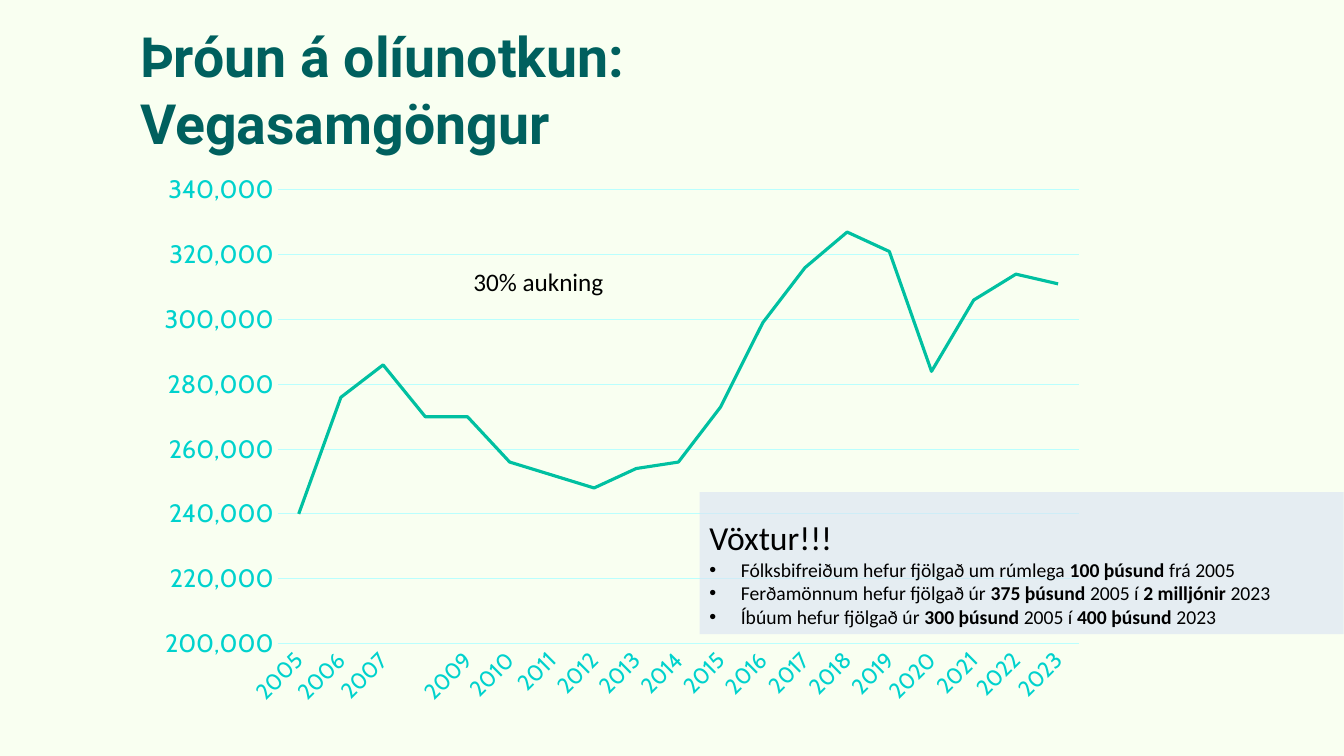
from lxml import etree
from pptx import Presentation
from pptx.chart.data import CategoryChartData
from pptx.dml.color import RGBColor
from pptx.enum.chart import XL_CHART_TYPE, XL_TICK_MARK
from pptx.enum.shapes import MSO_SHAPE
from pptx.enum.text import MSO_ANCHOR, PP_ALIGN
from pptx.oxml import parse_xml
from pptx.oxml.ns import nsdecls, qn
from pptx.util import Cm, Pt

LINE, NONE = XL_CHART_TYPE.LINE, XL_TICK_MARK.NONE
RECT, LEFT = MSO_SHAPE.RECTANGLE, PP_ALIGN.LEFT
TOP, BOTTOM = MSO_ANCHOR.TOP, MSO_ANCHOR.BOTTOM

TITLE = "Þróun á olíunotkun: Vegasamgöngur"
NOTE = "30% aukning"
HEAD = "Vöxtur!!!"
# Every second piece of a bullet is bold.
POINTS = [
    ["Fólksbifreiðum hefur fjölgað um rúmlega ", "100 þúsund ", "frá 2005"],
    ["Ferðamönnum hefur fjölgað úr ", "375 þúsund ", "2005 í ",
     "2 milljónir ", "2023"],
    ["Íbúum hefur fjölgað úr ", "300 þúsund ", "2005 í ",
     "400 þúsund ", "2023"],
]
YEARS = [str(year) for year in range(2005, 2024)]
USE = [240000, 276000, 286000, 270000, 270000, 256000, 252000, 248000,
       254000, 256000, 273000, 299000, 316000, 327000, 321000, 284000,
       306000, 314000, 311000]
PLOT = {"x": 0.14, "y": 0.05, "w": 0.84, "h": 0.82}


def color(code):
    return RGBColor.from_string(code)


def style(font, name, size, code, bold=False):
    font.name, font.size, font.bold = name, Pt(size), bold
    font.color.rgb = color(code)


def add_text(slide, box, text, anchor, *look):
    frame = slide.shapes.add_textbox(*map(Cm, box)).text_frame
    frame.word_wrap = True
    frame.vertical_anchor = anchor
    frame.text = text
    style(frame.paragraphs[0].runs[0].font, *look)


def set_line(line, code, width):
    line.color.rgb = color(code)
    line.width = Pt(width)


def add_graph(slide):
    data = CategoryChartData(number_format="#,##0")
    data.categories = YEARS
    data.add_series("Series 1", USE)
    box = map(Cm, (3.63, 4.09, 24.05, 13.94))
    chart = slide.shapes.add_chart(LINE, *box, data).chart
    chart.has_legend = chart.has_title = False
    style(chart.font, "Cabin", 10, "00302F")

    years, scale = chart.category_axis, chart.value_axis
    for axis, size in ((years, 16), (scale, 18)):
        axis.major_tick_mark = axis.minor_tick_mark = NONE
        style(axis.tick_labels.font, "Cabin", size, "00D2CD")
    set_line(years.format.line, "BAFFFE", 0.75)
    turn = years._element.find(qn("c:txPr")).find(qn("a:bodyPr"))
    turn.set("rot", "-2700000")
    turn.set("vert", "horz")
    scale.minimum_scale, scale.maximum_scale = 200000, 340000
    scale.major_unit = 20000
    scale.tick_labels.number_format = "#,##0"
    scale.tick_labels.number_format_is_linked = False
    scale.format.line.fill.background()
    set_line(scale.major_gridlines.format.line, "BAFFFE", 0.75)

    curve = chart.plots[0].series[0]
    curve.smooth = False
    set_line(curve.format.line, "00C0A1", 2.25)
    chart.plots[0].vary_by_categories = False

    area = chart._chartSpace.chart.plotArea
    for old in area.findall(qn("c:layout")):
        area.remove(old)
    modes = '<c:layoutTarget val="inner"/>'
    modes += '<c:xMode val="edge"/><c:yMode val="edge"/>'
    sizes = "".join(f'<c:{key} val="{val}"/>' for key, val in PLOT.items())
    area.insert(0, parse_xml(
        f'<c:layout {nsdecls("c")}><c:manualLayout>{modes}{sizes}'
        '</c:manualLayout></c:layout>'))


def add_bullet(para):
    props = para._p.get_or_add_pPr()
    props.set("marL", str(Cm(0.79)))
    props.set("indent", str(-Cm(0.79)))
    etree.SubElement(props, qn("a:buFont")).set("typeface", "Arial")
    etree.SubElement(props, qn("a:buChar")).set("char", "•")


def add_panel(slide):
    panel = slide.shapes.add_shape(RECT, *map(Cm, (17.63, 12.4, 16.23, 3.58)))
    panel.shadow.inherit = False
    panel.line.fill.background()
    panel.fill.solid()
    panel.fill.fore_color.rgb = color("DAE3F3")
    tint = panel._element.spPr.find(qn("a:solidFill"))[0]
    etree.SubElement(tint, qn("a:alpha")).set("val", "63000")

    frame = panel.text_frame
    frame.word_wrap = True
    frame.vertical_anchor = TOP
    head = frame.paragraphs[0]
    head.text = HEAD
    head.alignment = LEFT
    head.line_spacing = 1.5
    style(head.runs[0].font, "Calibri", 24, "000000")
    for parts in POINTS:
        para = frame.add_paragraph()
        para.alignment = LEFT
        add_bullet(para)
        for i, part in enumerate(parts):
            run = para.add_run()
            run.text = part
            style(run.font, "Calibri", 14, "000000", i % 2 == 1)


def main():
    deck = Presentation()
    deck.slide_width, deck.slide_height = Cm(33.87), Cm(19.05)
    slide = deck.slides.add_slide(deck.slide_layouts[6])
    slide.background.fill.solid()
    slide.background.fill.fore_color.rgb = color("F9FFF1")
    add_text(slide, (3.28, 0.36, 15.27, 3.68), TITLE, BOTTOM,
             "Roboto", 39.6, "00605E", True)
    add_text(slide, (11.68, 6.58, 5.08, 1.02), NOTE, TOP,
             "Calibri", 18, "000000")
    add_graph(slide)
    add_panel(slide)
    deck.save("out.pptx")


if __name__ == "__main__":
    main()
